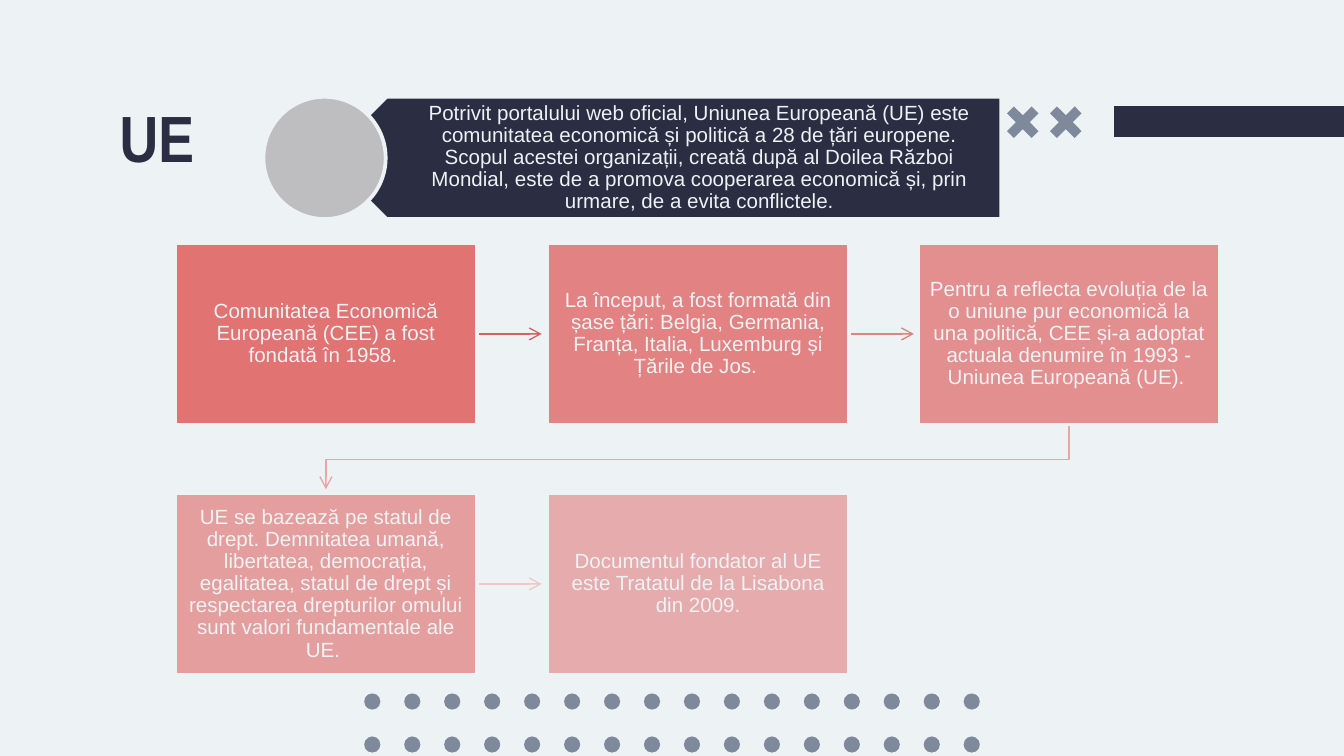
from lxml.etree import SubElement
from pptx import Presentation
from pptx.dml.color import RGBColor
from pptx.enum.shapes import MSO_CONNECTOR, MSO_SHAPE
from pptx.enum.text import MSO_ANCHOR, MSO_AUTO_SIZE, PP_ALIGN
from pptx.oxml.ns import qn
from pptx.util import Inches, Pt

PAPER, NAVY, SLATE, CORAL, GREY = "EDF2F4", "2B2D42", "7E899C", "E06666", "BEBEC0"
BOX_W, BOX_H = 2.25, 1.35
COLUMNS = [1.3, 4.07, 6.83]
ROWS = [1.81, 3.67]

INTRO = (
    "Potrivit portalului web oficial, Uniunea Europeană (UE) este comunitatea "
    "economică și politică a 28 de țări europene. Scopul acestei organizații, "
    "creată după al Doilea Război Mondial, este de a promova cooperarea economică "
    "și, prin urmare, de a evita conflictele."
)
# Text and opacity in percent, in reading order
STEPS = [
    ("Comunitatea Economică Europeană (CEE) a fost fondată în 1958. ", 90),
    ("La început, a fost formată din șase țări: Belgia, Germania, Franța, Italia, "
     "Luxemburg și Țările de Jos. ", 80),
    ("Pentru a reflecta evoluția de la o uniune pur economică la una politică, CEE "
     "și-a adoptat actuala denumire în 1993 - Uniunea Europeană (UE). ", 70),
    ("UE se bazează pe statul de drept. Demnitatea umană, libertatea, democrația, "
     "egalitatea, statul de drept și respectarea drepturilor omului sunt valori "
     "fundamentale ale UE. ", 60),
    ("Documentul fondator al UE este Tratatul de la Lisabona din 2009.", 50),
]
ARROW_COLORS = ["D66161", "DF8383", "E8A5A5", "F0C7C7"]


def rgb(color):
    return RGBColor.from_string(color)


def add_preset(slide, preset, box, fill, outline=None, opacity=100, rotation=0):
    shape = slide.shapes.add_shape(preset, *map(Inches, box))
    shape.shadow.inherit = False
    shape.rotation = rotation
    shape.fill.solid()
    shape.fill.fore_color.rgb = rgb(fill)
    if opacity < 100:
        color = shape.fill._xPr.find(qn("a:solidFill"))[0]
        SubElement(color, qn("a:alpha"), val=str(opacity * 1000))
    if outline:
        shape.line.color.rgb = rgb(outline)
        shape.line.width = Pt(2)
    else:
        shape.line.fill.background()
    return shape


def set_frame(frame, anchor, left, top, right, bottom):
    frame.word_wrap = True
    frame.auto_size = MSO_AUTO_SIZE.NONE
    frame.vertical_anchor = anchor
    frame.margin_left, frame.margin_top = Inches(left), Inches(top)
    frame.margin_right, frame.margin_bottom = Inches(right), Inches(bottom)


def add_run(paragraph, text, size, font, color, bold=False):
    run = paragraph.add_run()
    run.text = text
    run.font.size, run.font.name, run.font.bold = Pt(size), font, bold
    run.font.color.rgb = rgb(color)


def write_centred(frame, text, margins):
    set_frame(frame, MSO_ANCHOR.MIDDLE, *margins)
    paragraph = frame.paragraphs[0]
    paragraph.alignment = PP_ALIGN.CENTER
    paragraph.line_spacing = 0.9
    add_run(paragraph, text, 11, "Arial", PAPER)


def style_arrow(arrow, color):
    arrow.line.color.rgb = rgb(color)
    arrow.line.width = Pt(0.75)
    SubElement(arrow.line._get_or_add_ln(), qn("a:tailEnd"), type="arrow")


def add_straight_arrow(slide, left, y, color):
    arrow = slide.shapes.add_connector(
        MSO_CONNECTOR.STRAIGHT, Inches(left), Inches(y), Inches(left + 0.48), Inches(y))
    SubElement(arrow._element.spPr, qn("a:effectLst"))
    style_arrow(arrow, color)


def add_bent_arrow(slide, points, color):
    start, *rest = [(Inches(x), Inches(y)) for x, y in points]
    builder = slide.shapes.build_freeform(*start)
    builder.add_line_segments(rest, close=False)
    arrow = builder.convert_to_shape()
    arrow.shadow.inherit = False
    arrow.fill.background()
    style_arrow(arrow, color)


def add_decoration(slide):
    add_preset(slide, MSO_SHAPE.RECTANGLE, (8.29, 0.79, 1.71, 0.23), NAVY)
    for left in (7.48, 7.8):
        cross = add_preset(slide, MSO_SHAPE.CROSS, (left, 0.78, 0.26, 0.26), SLATE, rotation=45)
        cross.adjustments[0] = 0.36
    for top in (5.16, 5.48):
        for column in range(16):
            left = 2.71 + column * 4.46 / 15
            add_preset(slide, MSO_SHAPE.OVAL, (left, top, 0.12, 0.12), SLATE)


def add_title(slide):
    title = slide.shapes.title
    title.left, title.top = Inches(0.79), Inches(0.62)
    title.width, title.height = Inches(5.29), Inches(0.62)
    set_frame(title.text_frame, MSO_ANCHOR.TOP, 0.1, 0.1, 0.1, 0.1)
    heading = title.text_frame.paragraphs[0]
    heading.alignment = PP_ALIGN.LEFT
    add_run(heading, "UE", 35, "Arial Narrow", NAVY, bold=True)


def add_intro(slide):
    add_preset(slide, MSO_SHAPE.PENTAGON, (2.42, 0.72, 5.03, 0.91), NAVY, PAPER, rotation=180)
    # The banner is turned round, so its text stands in an upright box
    intro = slide.shapes.add_textbox(*map(Inches, (2.65, 0.72, 4.8, 0.91)))
    write_centred(intro.text_frame, INTRO, (0.4, 0.05, 0.09, 0.05))
    add_preset(slide, MSO_SHAPE.OVAL, (1.96, 0.72, 0.91, 0.91), GREY, PAPER)


def add_timeline(slide):
    for index, (text, opacity) in enumerate(STEPS):
        row, column = divmod(index, len(COLUMNS))
        left, top = COLUMNS[column], ROWS[row]
        # Arrow to the next step, behind the boxes
        if index < len(ARROW_COLORS):
            color = ARROW_COLORS[index]
            if column < len(COLUMNS) - 1:
                add_straight_arrow(slide, left + BOX_W, top + BOX_H / 2, color)
            else:
                start_x, end_x = left + BOX_W / 2, COLUMNS[0] + BOX_W / 2
                bottom = top + BOX_H
                add_bent_arrow(slide, [(start_x, bottom), (start_x, 3.42),
                                       (end_x, 3.42), (end_x, 3.64)], color)
        step = add_preset(slide, MSO_SHAPE.RECTANGLE, (left, top, BOX_W, BOX_H),
                          CORAL, PAPER, opacity)
        write_centred(step.text_frame, text, (0.08, 0.09, 0.08, 0.09))


def main():
    deck = Presentation()
    # Widescreen, 16 to 9
    deck.slide_width = Inches(10)
    deck.slide_height = deck.slide_width * 9 // 16
    slide = deck.slides.add_slide(deck.slide_layouts[5])
    slide.background.fill.solid()
    slide.background.fill.fore_color.rgb = rgb(PAPER)
    add_decoration(slide)
    add_title(slide)
    add_intro(slide)
    add_timeline(slide)
    deck.save("out.pptx")


if __name__ == "__main__":
    main()
